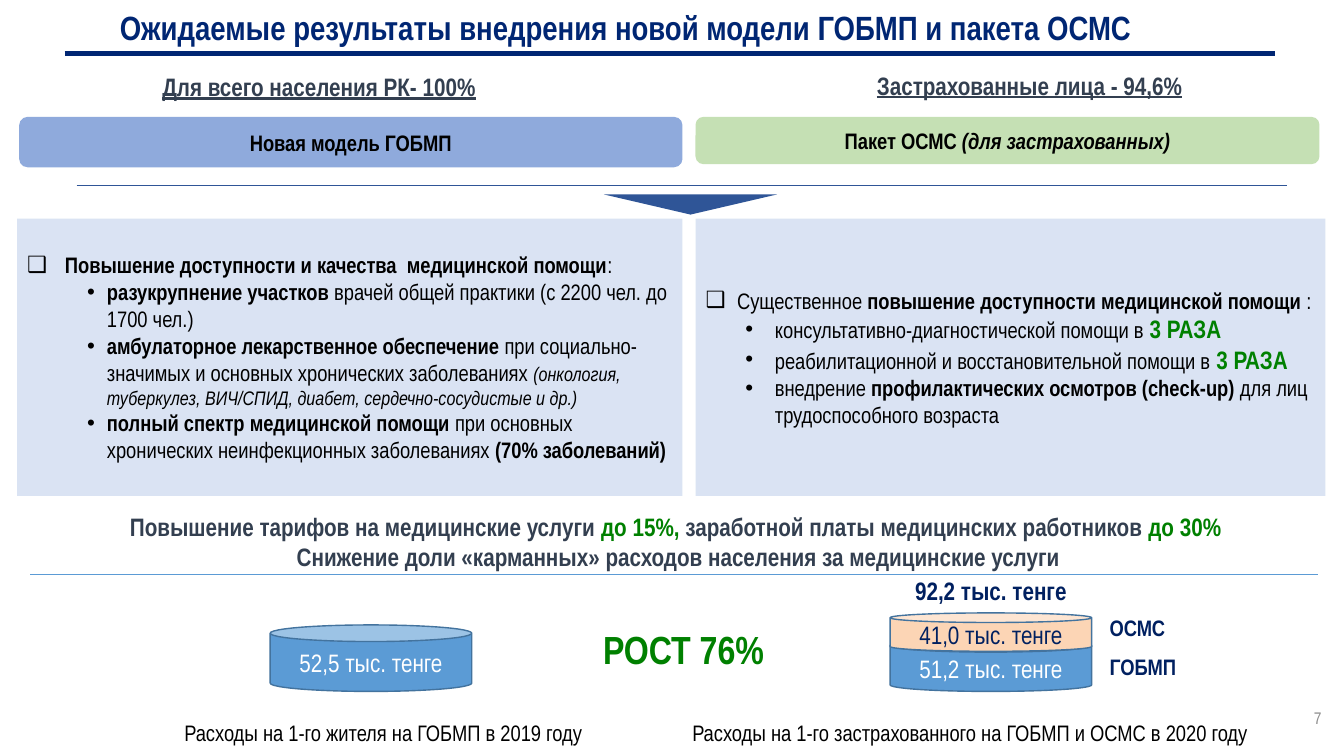
from lxml.etree import SubElement
from pptx import Presentation
from pptx.dml.color import RGBColor
from pptx.enum.shapes import MSO_CONNECTOR, MSO_SHAPE
from pptx.enum.text import MSO_ANCHOR, MSO_AUTO_SIZE, PP_ALIGN
from pptx.oxml.ns import qn
from pptx.util import Pt

COLORS = {
    "title": "002673", "navy": "002060", "slate": "333F50", "black": "000000",
    "white": "FFFFFF", "gray": "8C8C8C", "green": "008000", "header_blue": "8FAADC",
    "header_green": "C5E0B4", "panel": "DAE3F3", "arrow": "2F5597",
    "can_blue": "5B9BD5", "can_peach": "FCD5B5", "can_line": "43739E",
}


def write(shape, paragraphs, anchor=MSO_ANCHOR.MIDDLE, align=PP_ALIGN.CENTER):
    frame = shape.text_frame
    frame.word_wrap = True
    frame.auto_size = MSO_AUTO_SIZE.NONE
    frame.vertical_anchor = anchor
    for index, runs in enumerate(paragraphs):
        para = frame.add_paragraph() if index else frame.paragraphs[0]
        para.alignment = align
        para.space_before = Pt(0)
        for text, size, color, style in runs:
            span = para.add_run()
            span.text = text
            span.font.name = "Arial Narrow"
            span.font.size = Pt(size)
            span.font.bold = "b" in style
            span.font.italic = "i" in style
            span.font.underline = "u" in style
            span.font.color.rgb = RGBColor.from_string(COLORS[color])


def add_block(page, kind, place, fill):
    block = page.shapes.add_shape(kind, *map(Pt, place))
    block.shadow.inherit = False
    block.fill.solid()
    block.fill.fore_color.rgb = RGBColor.from_string(COLORS[fill])
    block.line.fill.background()
    return block


deck = Presentation()
deck.slide_width, deck.slide_height = Pt(960), Pt(540)
page = deck.slides.add_slide(deck.slide_layouts[3])
title, left_panel, right_panel = page.placeholders

title.left, title.top, title.width, title.height = Pt(36), Pt(0.7), Pt(821.5), Pt(37.4)
write(title, [[("Ожидаемые результаты внедрения новой модели ГОБМП и пакета ОСМС", 24, "title", "b")]])

headers = [
    ((13.7, 83.5, 473.8, 36), "header_blue", [("Новая модель ГОБМП", 16, "black", "b")]),
    ((496.8, 83.5, 445.7, 33.8), "header_green",
     [("Пакет ОСМС ", 16, "black", "b"), ("(для застрахованных)", 16, "black", "bi")]),
]
for place, fill, runs in headers:
    write(add_block(page, MSO_SHAPE.ROUNDED_RECTANGLE, place, fill), [runs])

left_text = [
    [("Повышение доступности и качества  медицинской помощи", 16, "black", "b"),
     (":", 16, "black", "")],
    [("разукрупнение участков ", 16, "black", "b"),
     ("врачей общей практики (с 2200 чел. до 1700 чел.)", 16, "black", "")],
    [("амбулаторное лекарственное обеспечение ", 16, "black", "b"),
     ("при социально-значимых и основных хронических заболеваниях ", 16, "black", ""),
     ("(онкология, туберкулез, ВИЧ/СПИД, диабет, сердечно-сосудистые и др.)", 14, "black", "i")],
    [("полный спектр медицинской помощи ", 16, "black", "b"),
     ("при основных хронических неинфекционных заболеваниях ", 16, "black", ""),
     ("(70% заболеваний)", 16, "black", "b")],
]
right_text = [
    [("Существенное ", 16, "black", ""),
     ("повышение доступности медицинской помощи ", 16, "black", "b"), (":", 16, "black", "")],
    [("консультативно-диагностической помощи в", 16, "black", ""), (" 3 РАЗА", 18, "green", "b")],
    [("реабилитационной и восстановительной помощи в", 16, "black", ""),
     (" 3 РАЗА", 18, "green", "b")],
    [("внедрение ", 16, "black", ""),
     ("профилактических осмотров (сheck-up) ", 16, "black", "b"),
     ("для лиц трудоспособного возраста", 16, "black", "")],
]
panels = [
    (left_panel, 12.2, 475.2, left_text, (27, -27), (57, -14.2)),
    (right_panel, 496.8, 450, right_text, (22.5, -22.5), (49.5, -21)),
]
for panel, left, width, text, head_indent, item_indent in panels:
    panel.left, panel.top, panel.width, panel.height = Pt(left), Pt(156.2), Pt(width), Pt(198)
    panel.fill.solid()
    panel.fill.fore_color.rgb = RGBColor.from_string(COLORS["panel"])
    write(panel, text, align=PP_ALIGN.LEFT)
    for index, para in enumerate(panel.text_frame.paragraphs):
        para.level = 1 if index else 0
        margin, indent = item_indent if index else head_indent
        properties = para._p.get_or_add_pPr()
        properties.set("marL", str(Pt(margin)))
        properties.set("indent", str(Pt(indent)))
        SubElement(properties, qn("a:buFont")).set("typeface", "Arial")
        SubElement(properties, qn("a:buChar")).set("char", "•" if index else "❑")

rules = [
    (46.1, 910.8, 38.2, "title", 3),
    (54.7, 919.4, 132.5, "arrow", 1),
    (21.6, 941.8, 410.4, "can_blue", 0.5),
]
for start, end, y, color, weight in rules:
    rule = page.shapes.add_connector(MSO_CONNECTOR.STRAIGHT, Pt(start), Pt(y), Pt(end), Pt(y))
    rule.line.color.rgb = RGBColor.from_string(COLORS[color])
    rule.line.width = Pt(weight)
    SubElement(rule._element.spPr, qn("a:effectLst"))

arrow = add_block(page, MSO_SHAPE.PENTAGON, (486, 84.2, 14.4, 123.8), "arrow")
arrow.adjustments[0] = 1
arrow.rotation = 90

cans = [
    (193, 446.4, 47.5, "can_blue", "52,5 тыс. тенге", "white"),
    (635.8, 456.5, 37.4, "can_blue", "51,2 тыс. тенге", "white"),
    (635.8, 437.8, 27.4, "can_peach", "41,0 тыс. тенге", "navy"),
]
for left, top, height, fill, label, color in cans:
    can = add_block(page, MSO_SHAPE.CAN, (left, top, 144, height), fill)
    can.line.color.rgb = RGBColor.from_string(COLORS["can_line"])
    can.line.width = Pt(1)
    write(can, [[(label, 18, color, "")]])

tariffs = [
    [("Повышение тарифов на медицинские услуги ", 18, "slate", "b"), ("до 15%, ", 18, "green", "b"),
     ("заработной платы медицинских работников ", 18, "slate", "b"), ("до 30% ", 18, "green", "b")],
    [("Снижение доли «карманных» расходов населения за медицинские услуги", 18, "slate", "b")],
]
top, middle = MSO_ANCHOR.TOP, MSO_ANCHOR.MIDDLE
left, center, right = PP_ALIGN.LEFT, PP_ALIGN.CENTER, PP_ALIGN.RIGHT
labels = [
    ((573.8, 48.2, 323.3, 26), [[("Застрахованные лица - 94,6%", 18, "slate", "bu")]], middle, center),
    ((66.2, 49, 323.3, 26), [[("Для всего населения РК- 100%", 18, "slate", "bu")]], middle, center),
    ((20.2, 361.4, 928.8, 72.7), tariffs, top, center),
    ((487.4, 509.8, 454.3, 26.6),
     [[("Расходы на 1-го застрахованного на ГОБМП и ОСМС в 2020 году", 16, "black", "")]], top, left),
    ((124.6, 509.8, 343.4, 26.6),
     [[("Расходы на 1-го жителя на ГОБМП в 2019 году", 16, "black", "")]], top, left),
    ((635.8, 407.5, 144, 28.8), [[("92,2 тыс. тенге", 18, "navy", "b")]], top, center),
    ((785.5, 434.9, 72, 26.6), [[("ОСМС", 16, "navy", "b")]], top, left),
    ((785.5, 463, 72, 26.6), [[("ГОБМП", 16, "navy", "b")]], top, left),
    ((416.2, 442.8, 144, 41), [[("РОСТ 76%", 28, "green", "b")]], top, center),
    ((870.5, 501.8, 80.6, 28.8), [[("7", 12, "gray", "")]], top, right),
]
for place, text, anchor, align in labels:
    box = page.shapes.add_textbox(*map(Pt, place))
    write(box, text, anchor, align)

deck.save("out.pptx")
